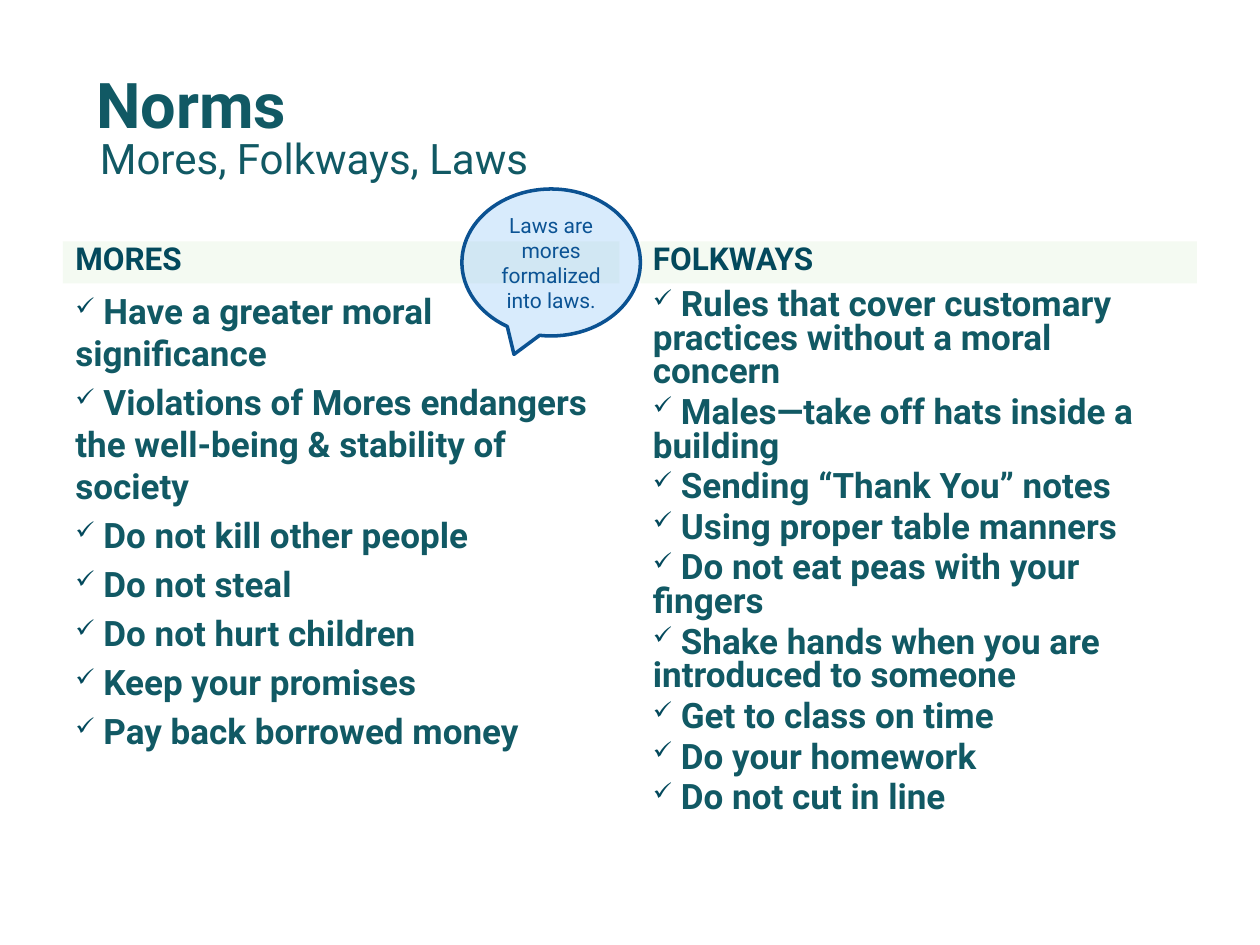
from lxml import etree
from pptx import Presentation
from pptx.dml.color import RGBColor
from pptx.enum.shapes import MSO_SHAPE
from pptx.enum.text import MSO_ANCHOR, PP_ALIGN
from pptx.oxml.ns import qn
from pptx.util import Pt

RECT, BUBBLE = MSO_SHAPE.RECTANGLE, MSO_SHAPE.OVAL_CALLOUT
TOP, MIDDLE, BOTTOM = MSO_ANCHOR.TOP, MSO_ANCHOR.MIDDLE, MSO_ANCHOR.BOTTOM
CENTER = PP_ALIGN.CENTER

# Content
TITLE = "Norms"
SUB = "Mores, Folkways, Laws"
NOTE = "Laws are mores formalized into laws."
COLS = [
    ("MORES", 1.0, [
        "Have a greater moral significance",
        "Violations of Mores endangers the well-being & stability of society",
        "Do not kill other people",
        "Do not steal",
        "Do not hurt children",
        "Keep your promises",
        "Pay back borrowed money",
    ]),
    ("FOLKWAYS", 0.8, [
        "Rules that cover customary practices without a moral concern",
        "Males—take off hats inside a building",
        "Sending “Thank You” notes",
        "Using proper table manners",
        "Do not eat peas with your fingers",
        "Shake hands when you are introduced to someone",
        "Get to class on time",
        "Do your homework",
        "Do not cut in line",
    ]),
]

# Style and grid, in points
FONT = "Roboto"
TEAL, DARK, BLUE = "115964", "03495C", "0B5394"
LEFT, WIDTH, GAP = 36, 318, 12
HEAD_Y, HEAD_H, LIST_H = 138, 24, 320


def color(code):
    return RGBColor.from_string(code)


def tint(shape, code, alpha):
    shape.fill.solid()
    shape.fill.fore_color.rgb = color(code)
    clr = shape.fill._xPr.find(".//" + qn("a:srgbClr"))
    etree.SubElement(clr, qn("a:alpha"), val=str(alpha * 1000))


def bullet(para):
    props = para._p.get_or_add_pPr()
    props.set("marL", "0")
    props.set("indent", "0")
    clr = etree.SubElement(props, qn("a:buClr"))
    etree.SubElement(clr, qn("a:srgbClr"), val=DARK)
    etree.SubElement(props, qn("a:buSzPct"), val="70000")
    etree.SubElement(props, qn("a:buChar"), char="✓")


def style(para, size, code, bold=False):
    font = para.font
    font.name, font.size, font.bold = FONT, Pt(size), bold
    font.color.rgb = color(code)


def box(slide, at, anchor, kind=None):
    area = [Pt(n) for n in at]
    if kind is None:
        shape = slide.shapes.add_textbox(*area)
    else:
        shape = slide.shapes.add_shape(kind, *area)
        shape.shadow.inherit = False
    frame = shape.text_frame
    frame.word_wrap = True
    frame.vertical_anchor = anchor
    return shape


def label(shape, text, size, code, bold=False, align=None):
    para = shape.text_frame.paragraphs[0]
    para.text = text
    para.alignment = align
    style(para, size, code, bold)


def column(slide, x, head, space, items):
    # Header band
    band = box(slide, (x, HEAD_Y, WIDTH, HEAD_H), BOTTOM, RECT)
    tint(band, "E5F4E0", 39)
    band.line.fill.background()
    band.text_frame.margin_top = 0
    label(band, head, 18, DARK, True, PP_ALIGN.LEFT)

    # Checked list
    frame = box(slide, (x, HEAD_Y + HEAD_H, WIDTH, LIST_H), TOP).text_frame
    for i, item in enumerate(items):
        para = frame.paragraphs[0] if i == 0 else frame.add_paragraph()
        para.text = " " + item
        para.line_spacing = space
        para.space_before = Pt(4 if i else 0)
        bullet(para)
        style(para, 20, TEAL, True)


def main():
    deck = Presentation()
    deck.slide_width, deck.slide_height = Pt(720), Pt(540)
    slide = deck.slides.add_slide(deck.slide_layouts[6])

    for i, (head, space, items) in enumerate(COLS):
        column(slide, LEFT + i * (WIDTH + GAP), head, space, items)

    # Title and subtitle
    label(box(slide, (48, 34, 648, 50), MIDDLE), TITLE, 36, TEAL, True)
    label(box(slide, (50, 72, 642, 36), TOP), SUB, 24, TEAL)

    # Callout on laws
    note = box(slide, (264, 108, 102, 84), MIDDLE, BUBBLE)
    tint(note, "91C6F7", 35)
    note.line.color.rgb = color("0B5292")
    note.line.width = Pt(2)
    label(note, NOTE, 12, BLUE, align=CENTER)

    deck.save("out.pptx")


if __name__ == "__main__":
    main()
